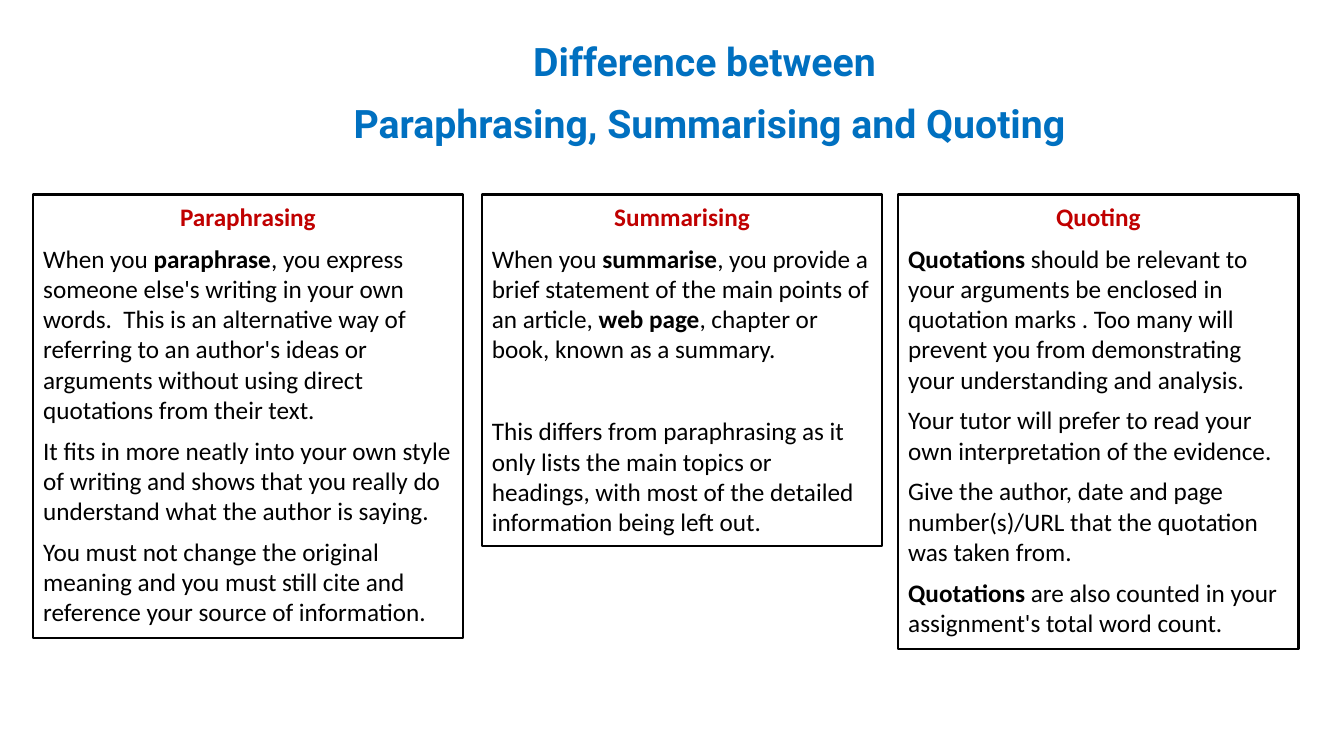
from pptx import Presentation
from pptx.dml.color import RGBColor
from pptx.enum.shapes import MSO_SHAPE
from pptx.enum.text import MSO_ANCHOR, PP_ALIGN
from pptx.util import Inches, Pt

RECTANGLE = MSO_SHAPE.RECTANGLE
TOP = MSO_ANCHOR.TOP
CENTER, LEFT = PP_ALIGN.CENTER, PP_ALIGN.LEFT

SLIDE_W, SLIDE_H = 13.33, 7.5
COLUMNS_TOP = 1.93
BODY_GAP = 7.5
WIDE_GAP = 37

TITLE = ["Difference between ", "Paraphrasing, Summarising and Quoting"]

# Each column: left, width, height, heading, paragraph gap, paragraphs (** marks bold)
COLUMNS = [
    (0.33, 4.26, 4.4, "Paraphrasing", BODY_GAP, [
        "When you **paraphrase**, you express someone else's writing in your own "
        "words.  This is an alternative way of referring to an author's ideas or "
        "arguments without using direct quotations from their text.",
        "It fits in more neatly into your own style of writing and shows that you "
        "really do understand what the author is saying.",
        "You must not change the original meaning and you must still cite and "
        "reference your source of information.",
    ]),
    (4.78, 3.97, 3.49, "Summarising", WIDE_GAP, [
        "When you **summarise**, you provide a brief statement of the main points "
        "of an article, **web page**, chapter or book, known as a summary.",
        "This differs from paraphrasing as it only lists the main topics or "
        "headings, with most of the detailed information being left out.",
    ]),
    (8.91, 3.97, 4.51, "Quoting", BODY_GAP, [
        "**Quotations** should be relevant to your arguments be enclosed in "
        "quotation marks . Too many will prevent you from demonstrating your "
        "understanding and analysis.",
        "Your tutor will prefer to read your own interpretation of the evidence.",
        "Give the author, date and page number(s)/URL that the quotation was "
        "taken from.",
        "**Quotations** are also counted in your assignment's total word count.",
    ]),
]


def color(hex_value):
    return RGBColor.from_string(hex_value)


def style(paragraph, font_name, size, hex_value, align, gap, spacing=1.0):
    paragraph.alignment = align
    paragraph.line_spacing = spacing
    paragraph.space_after = Pt(gap)
    paragraph.font.name = font_name
    paragraph.font.size = Pt(size)
    paragraph.font.color.rgb = color(hex_value)


def next_paragraph(frame, index):
    return frame.add_paragraph() if index else frame.paragraphs[0]


def add_title(slide, left, top, width, height):
    title = slide.shapes.add_textbox(*map(Inches, (left, top, width, height)))
    frame = title.text_frame
    frame.word_wrap = True
    for index, line in enumerate(TITLE):
        paragraph = next_paragraph(frame, index)
        paragraph.text = line
        style(paragraph, "Roboto", 28, "0070C0", CENTER, 8, 1.07)
        paragraph.font.bold = True


def add_column(slide, left, top, width, height, heading, gap, texts):
    column = slide.shapes.add_shape(
        RECTANGLE, *map(Inches, (left, top, width, height)))
    column.shadow.inherit = False
    column.fill.background()
    column.line.color.rgb = color("000000")
    column.line.width = Pt(1.5)
    frame = column.text_frame
    frame.word_wrap = True
    frame.vertical_anchor = TOP

    # Heading
    paragraph = frame.paragraphs[0]
    paragraph.text = heading
    style(paragraph, "Calibri", 18, "C00000", CENTER, 8, 1.07)
    paragraph.font.bold = True

    # Body, with every second part in bold
    for text in texts:
        paragraph = frame.add_paragraph()
        style(paragraph, "Calibri", 18, "000000", LEFT, gap)
        for index, part in enumerate(text.split("**")):
            if part:
                run = paragraph.add_run()
                run.text = part
                if index % 2:
                    run.font.bold = True


def main():
    deck = Presentation()
    deck.slide_width, deck.slide_height = Inches(SLIDE_W), Inches(SLIDE_H)
    slide = deck.slides.add_slide(deck.slide_layouts[6])
    add_title(slide, 1.36, 0.29, 11.35, 1.19)
    for left, width, height, heading, gap, texts in COLUMNS:
        add_column(slide, left, COLUMNS_TOP, width, height, heading, gap, texts)
    deck.save("out.pptx")


if __name__ == "__main__":
    main()
